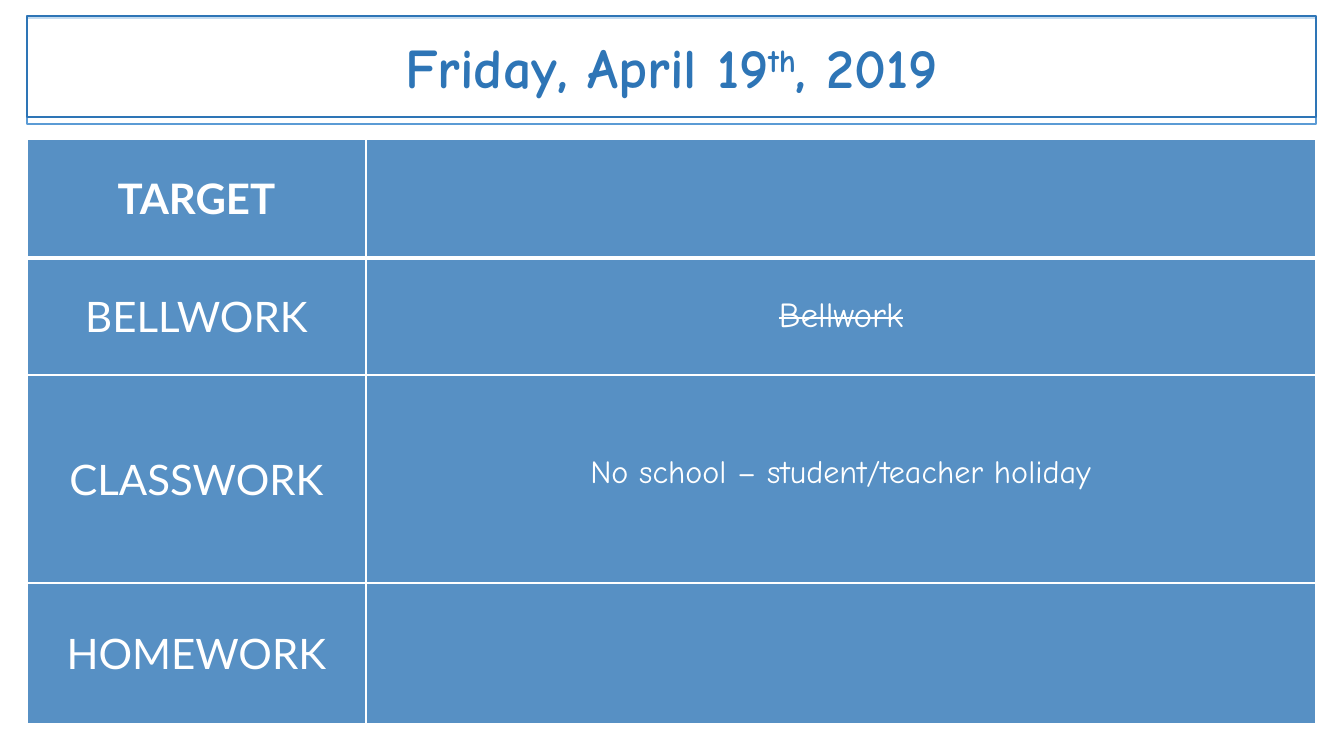
"""Build the daily agenda slide for Friday, April 19th, 2019."""
import lxml.etree
import pptx
import pptx.dml.color
import pptx.enum.shapes
import pptx.enum.text
import pptx.oxml.ns
import pptx.util

EMU_PER_PX = 914400 / 100.8
COLORS = {"white": "FFFFFF", "blue": "2E75B6", "light blue": "5B9BD5"}
ROW_HEIGHTS = [119, 117, 208, 141]
COLUMN_WIDTHS = [339, 950]
AGENDA = [
    ("TARGET", ""),
    ("BELLWORK", "Bellwork"),
    ("CLASSWORK", "No school – student/teacher holiday"),
    ("HOMEWORK", ""),
]
DETAIL_SIZES = [25, 25, 23, 25]
LEFT, WIDTH = 27, sum(COLUMN_WIDTHS)


def px(length):
    return pptx.util.Emu(round(length * EMU_PER_PX))


def fill_solid(fill, color, opacity=100):
    fill.solid()
    fill.fore_color.rgb = pptx.dml.color.RGBColor.from_string(COLORS[color])
    if opacity < 100:
        color_element = fill._xPr.find(".//" + pptx.oxml.ns.qn("a:srgbClr"))
        alpha = lxml.etree.SubElement(color_element, pptx.oxml.ns.qn("a:alpha"))
        alpha.set("val", str(opacity * 1000))


presentation = pptx.Presentation()
presentation.slide_width = px(1344)
presentation.slide_height = px(756)
slide = presentation.slides.add_slide(presentation.slide_layouts[5])

frame = slide.shapes.add_shape(
    pptx.enum.shapes.MSO_SHAPE.RECTANGLE, px(LEFT), px(18), px(WIDTH), px(106))
frame.shadow.inherit = False
fill_solid(frame.fill, "white")
fill_solid(frame.line.fill, "light blue")
frame.line.width = pptx.util.Pt(1)

table_frame = slide.shapes.add_table(
    len(ROW_HEIGHTS), len(COLUMN_WIDTHS),
    px(LEFT), px(139), px(WIDTH), px(sum(ROW_HEIGHTS)))
table = table_frame.table
table.first_row = False
table.horz_banding = False
for column, width in zip(table.columns, COLUMN_WIDTHS):
    column.width = px(width)

for row_index, texts in enumerate(AGENDA):
    table.rows[row_index].height = px(ROW_HEIGHTS[row_index])
    for column_index, text in enumerate(texts):
        cell = table.cell(row_index, column_index)
        cell.vertical_anchor = pptx.enum.text.MSO_ANCHOR.MIDDLE
        fill_solid(cell.fill, "blue", 80)
        cell_properties = cell._tc.get_or_add_tcPr()
        for position, side in enumerate(["lnL", "lnR", "lnT", "lnB"]):
            thick = (row_index, side) in [(0, "lnB"), (1, "lnT")]
            border = pptx.oxml.parse_xml(
                f'<a:{side} {pptx.oxml.ns.nsdecls("a")} w="{38100 if thick else 12700}">'
                f'<a:solidFill><a:srgbClr val="{COLORS["white"]}"/></a:solidFill></a:{side}>')
            cell_properties.insert(position, border)

        cell.text = text
        paragraph = cell.text_frame.paragraphs[0]
        paragraph.alignment = pptx.enum.text.PP_ALIGN.CENTER
        is_label = column_index == 0
        paragraph.font.name = "Lato" if is_label else "Comic Neue"
        paragraph.font.size = pptx.util.Pt(30 if is_label else DETAIL_SIZES[row_index])
        paragraph.font.bold = is_label and row_index == 0
        fill_solid(paragraph.font.fill, "white")

bellwork = table.cell(1, 1).text_frame.paragraphs[0].runs[0]
bellwork.font._element.set("strike", "sngStrike")
classwork = table.cell(2, 1)
classwork.vertical_anchor = pptx.enum.text.MSO_ANCHOR.TOP
classwork.margin_top = px(79)

title = slide.shapes.title
slide.shapes._spTree.append(title._element)
title.left, title.top, title.width, title.height = px(LEFT), px(16), px(WIDTH), px(101)
fill_solid(title.fill, "white", 65)
fill_solid(title.line.fill, "blue")
title.line.width = pptx.util.Pt(1)
title.text_frame.auto_size = pptx.enum.text.MSO_AUTO_SIZE.NONE
title.text_frame.vertical_anchor = pptx.enum.text.MSO_ANCHOR.MIDDLE
paragraph = title.text_frame.paragraphs[0]
paragraph.alignment = pptx.enum.text.PP_ALIGN.CENTER
paragraph.font.name = "Comic Neue"
paragraph.font.size = pptx.util.Pt(40)
paragraph.font.bold = True
fill_solid(paragraph.font.fill, "blue")
for text in ["Friday, April 19", "th", ", 2019"]:
    run = paragraph.add_run()
    run.text = text
    if text == "th":
        run.font._element.set("baseline", "30000")

presentation.save("out.pptx")
